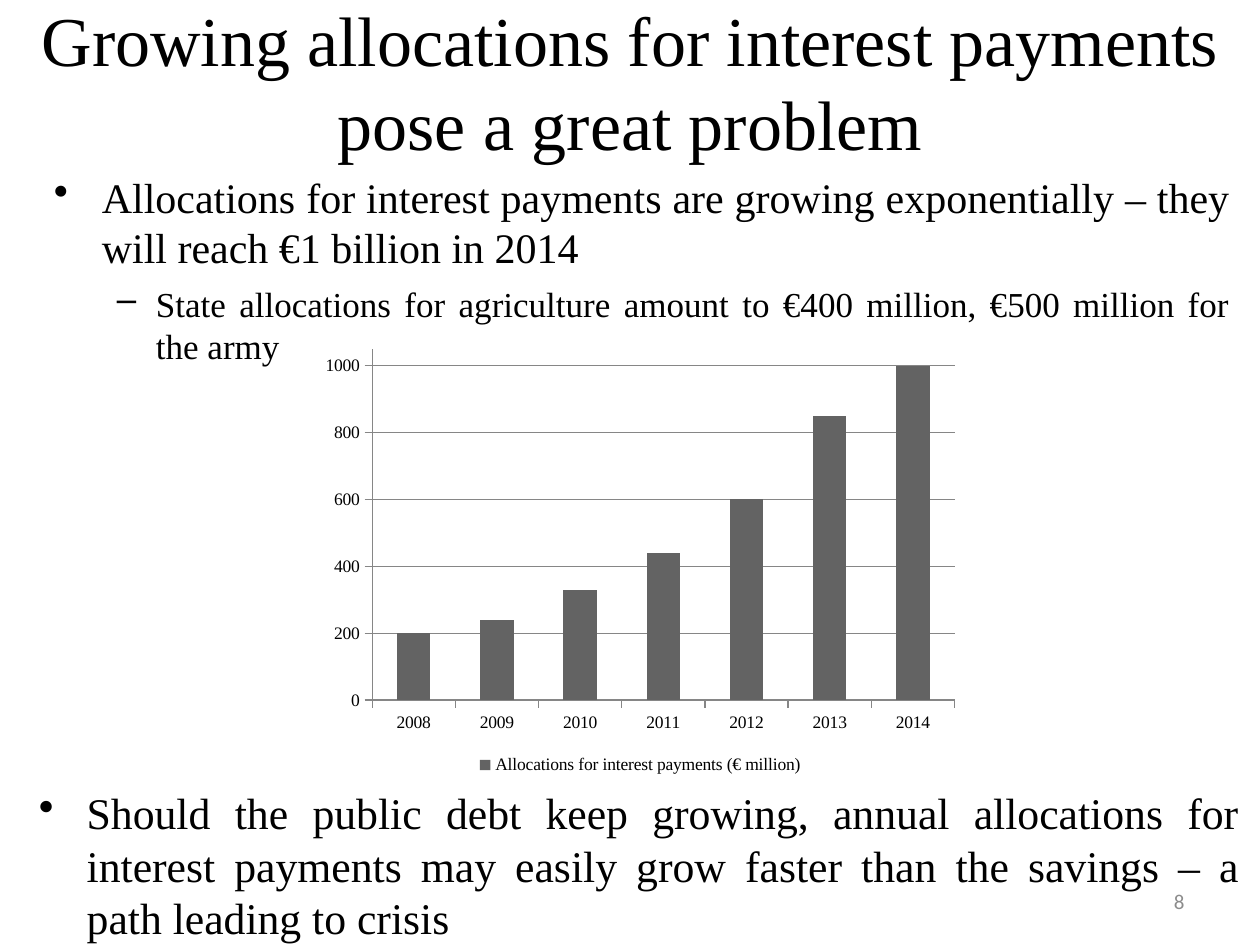
from pptx import Presentation
from pptx.chart.data import CategoryChartData
from pptx.dml.color import RGBColor
from pptx.enum.chart import XL_CHART_TYPE as ChartType, XL_LEGEND_POSITION as LegendPos, XL_TICK_MARK as Tick
from pptx.enum.text import MSO_ANCHOR as Anchor, PP_ALIGN as Align
from pptx.util import Inches, Pt
from lxml.etree import SubElement
from pptx.oxml.ns import qn

SERIF = "Times New Roman"
COLORS = {"text": "000000", "number": "8C8C8C", "bar": "636363", "line": "868686"}

TITLE = "Growing allocations for interest payments pose a great problem"
GROWTH = [
    ("Allocations for interest payments are growing exponentially – they will reach €1 billion in 2014", 24, 0),
    ("State allocations for agriculture amount to €400 million, €500 million for the army", 20, 1),
]
WARNING = [
    ("Should the public debt keep growing, annual allocations for interest payments "
     "may easily grow faster than the savings – a path leading to crisis", 25, 0),
]
BULLETS = [("•", 0.38, 0.38), ("–", 0.81, 0.31)]
INTEREST = {"2008": 200, "2009": 240, "2010": 330, "2011": 440, "2012": 600, "2013": 850, "2014": 1000}
SERIES = "Allocations for interest payments (€ million)"


def style(font, size, color="text", name=SERIF):
    font.name, font.size = name, Pt(size)
    font.color.rgb = RGBColor.from_string(COLORS[color])


def add_frame(box, anchor=Anchor.TOP):
    frame = slide.shapes.add_textbox(*map(Inches, box)).text_frame
    frame.word_wrap = True
    frame.vertical_anchor = anchor
    return frame


def add_line(box, text, size, align, color="text", name=SERIF):
    paragraph = add_frame(box, Anchor.MIDDLE).paragraphs[0]
    paragraph.text, paragraph.alignment = text, align
    style(paragraph.font, size, color, name)


def add_bullets(box, points):
    frame = add_frame(box)
    for i, (text, size, level) in enumerate(points):
        paragraph = frame.add_paragraph() if i else frame.paragraphs[0]
        paragraph.text, paragraph.level = text, level
        paragraph.alignment = Align.JUSTIFY
        paragraph.space_before = paragraph.space_after = Pt(3)
        style(paragraph.font, size)
        mark, margin, hang = BULLETS[level]
        properties = paragraph._p.get_or_add_pPr()
        properties.set("marL", str(Inches(margin)))
        properties.set("indent", str(-Inches(hang)))
        bullet = SubElement(properties, qn("a:buChar"), char=mark)
        properties.remove(bullet)
        properties.find(qn("a:defRPr")).addprevious(bullet)


def add_interest_chart(box):
    data = CategoryChartData()
    data.categories = list(INTEREST)
    data.add_series(SERIES, list(INTEREST.values()))
    chart = slide.shapes.add_chart(ChartType.COLUMN_CLUSTERED, *map(Inches, box), data).chart
    style(chart.font, 10)
    chart.has_title = False
    chart.has_legend = True
    chart.legend.position = LegendPos.BOTTOM
    chart.legend.include_in_layout = False
    plot = chart.plots[0]
    plot.gap_width = 150
    plot.vary_by_categories = False
    bars = plot.series[0].format.fill
    bars.solid()
    bars.fore_color.rgb = RGBColor.from_string(COLORS["bar"])
    years, amounts = chart.category_axis, chart.value_axis
    amounts.minimum_scale, amounts.maximum_scale, amounts.major_unit = 0, 1050, 200
    amounts.has_major_gridlines = True
    for axis in (years, amounts):
        axis.major_tick_mark = Tick.OUTSIDE
    for part in (years, amounts, amounts.major_gridlines):
        part.format.line.color.rgb = RGBColor.from_string(COLORS["line"])
        part.format.line.width = Pt(0.75)


deck = Presentation()
deck.slide_width, deck.slide_height = Inches(10), Inches(7.5)
slide = deck.slides.add_slide(deck.slide_layouts[6])

add_line((0, 0.13, 10, 1.02), TITLE, 40, Align.CENTER)
add_line((7.17, 6.95, 2.33, 0.4), "8", 12, Align.RIGHT, "number", "Calibri")
add_bullets((0.33, 1.31, 9.53, 1.42), GROWTH)
add_bullets((0.21, 6.19, 9.72, 1.1), WARNING)
add_interest_chart((2.48, 2.7, 5.2, 3.49))

deck.save("out.pptx")
